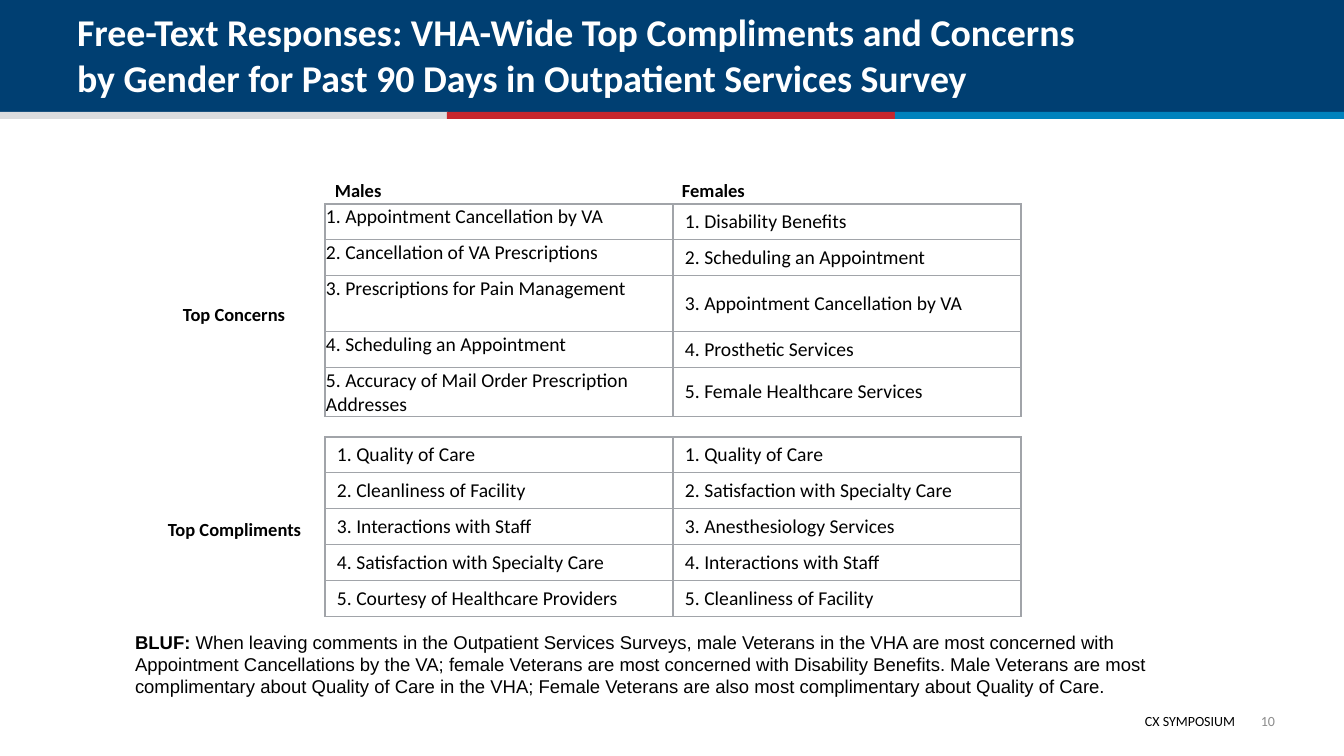
from dataclasses import dataclass

from lxml import etree
from pptx import Presentation
from pptx import util as u
from pptx.dml.color import RGBColor
from pptx.enum import shapes, text
from pptx.oxml.ns import qn

TITLE = ("Free-Text Responses: VHA-Wide Top Compliments and Concerns\v"
         "by Gender for Past 90 Days in Outpatient Services Survey")
CONCERNS = [
    ("Appointment Cancellation by VA", "Disability Benefits"),
    ("Cancellation of VA Prescriptions", "Scheduling an Appointment"),
    ("Prescriptions for Pain Management", "Appointment Cancellation by VA"),
    ("Scheduling an Appointment", "Prosthetic Services"),
    ("Accuracy of Mail Order Prescription Addresses", "Female Healthcare Services"),
]
COMPLIMENTS = [
    ("Quality of Care", "Quality of Care"),
    ("Cleanliness of Facility", "Satisfaction with Specialty Care"),
    ("Interactions with Staff", "Anesthesiology Services"),
    ("Satisfaction with Specialty Care", "Interactions with Staff"),
    ("Courtesy of Healthcare Providers", "Cleanliness of Facility"),
]
LABELS = [
    ("Males", 325, 174, 67),
    ("Females", 672, 174, 84),
    ("Top Concerns", 173, 298, 124),
    ("Top Compliments", 158, 513, 155),
]
BLUF = [
    ("BLUF:", True),
    (" When leaving comments in the Outpatient Services Surveys, male Veterans in the VHA "
     "are most concerned with Appointment Cancellations by the VA; female Veterans are most "
     "concerned with Disability Benefits. Male Veterans are most complimentary about Quality "
     "of Care in the VHA; Female Veterans are also most complimentary about Quality of Care.",
     False),
]


@dataclass(frozen=True)
class Theme:
    navy: str = "003F72"
    stripes: tuple = ("DBDCDE", "C6262D", "0082BD")
    white: str = "FFFFFF"
    ink: str = "000000"
    muted: str = "8C8C8C"
    border: str = "A1A4A9"
    font: str = "Calibri"
    note_font: str = "Arial"
    title: float = 27
    cell: float = 14
    label: float = 13.2
    footer: float = 10


T = Theme()
W, H = 1344, 756
TABLE_X, COL_W, ROW_H = 325, 348, 35
TIGHT, ROOMY = (1, 1, 1, 0), (12, 6, 12, 6)
TOP, MIDDLE, BOTTOM = (text.MSO_ANCHOR.TOP, text.MSO_ANCHOR.MIDDLE,
                       text.MSO_ANCHOR.BOTTOM)


def px(n):
    return u.Emu(round(n * 914400 / 100.8))


def write(tf, content, size=T.label, color=T.ink, font=T.font, bold=False,
          align=text.PP_ALIGN.LEFT, before=0):
    p = tf.paragraphs[0]
    p.alignment = align
    p.space_before = u.Pt(before)
    runs = [(content, bold)] if isinstance(content, str) else content
    for words, strong in runs:
        for i, line in enumerate(words.split("\v")):
            if i:
                p.add_line_break()
            r = p.add_run()
            r.text = line
            r.font.size = u.Pt(size)
            r.font.name = font
            r.font.bold = strong
            r.font.color.rgb = RGBColor.from_string(color)


def set_margins(target, insets):
    (target.margin_left, target.margin_top,
     target.margin_right, target.margin_bottom) = map(px, insets)


def add_bar(s, x, y, w, h, color):
    sp = s.shapes.add_shape(shapes.MSO_SHAPE.RECTANGLE, *map(px, (x, y, w, h)))
    sp.shadow.inherit = False
    sp.fill.solid()
    sp.fill.fore_color.rgb = RGBColor.from_string(color)
    sp.line.fill.background()


def add_text(s, box, content, insets=(10, 5, 10, 5), wrap=True, anchor=TOP, **fmt):
    tf = s.shapes.add_textbox(*map(px, box)).text_frame
    tf.word_wrap = wrap
    tf.vertical_anchor = anchor
    set_margins(tf, insets)
    write(tf, content, **fmt)


def add_borders(cell):
    tc_pr = cell._tc.get_or_add_tcPr()
    for i, side in enumerate(("a:lnL", "a:lnR", "a:lnT", "a:lnB")):
        ln = etree.Element(qn(side), w=str(u.Pt(1)))
        fill = etree.SubElement(ln, qn("a:solidFill"))
        etree.SubElement(fill, qn("a:srgbClr"), val=T.border)
        tc_pr.insert(i, ln)


def add_ranking(s, y, rows, heights, styles):
    box = (TABLE_X, y, 2 * COL_W, sum(heights))
    table = s.shapes.add_table(len(rows), 2, *map(px, box)).table
    table.first_row = table.horz_banding = False
    for column in table.columns:
        column.width = px(COL_W)
    for i, (row, height) in enumerate(zip(rows, heights)):
        table.rows[i].height = px(height)
        for j, (topic, (insets, anchor)) in enumerate(zip(row, styles)):
            cell = table.cell(i, j)
            set_margins(cell, insets)
            cell.vertical_anchor = anchor
            cell.fill.background()
            add_borders(cell)
            write(cell.text_frame, f"{i + 1}. {topic}", size=T.cell)


def main():
    prs = Presentation()
    prs.slide_width, prs.slide_height = px(W), px(H)
    s = prs.slides.add_slide(prs.slide_layouts[5])

    add_bar(s, 0, 0, W, 115, T.navy)
    stripe_w = W // len(T.stripes)
    for i, color in enumerate(T.stripes):
        add_bar(s, i * stripe_w - 1, 112, stripe_w + 1, 7, color)

    title = s.shapes.title
    title.left, title.top, title.width, title.height = map(px, (67, 15, 1210, 90))
    tf = title.text_frame
    tf.auto_size = text.MSO_AUTO_SIZE.NONE
    tf.vertical_anchor = BOTTOM
    write(tf, TITLE, size=T.title, color=T.white, bold=True)
    s.shapes._spTree.append(title._element)

    add_ranking(s, 204, CONCERNS, [ROW_H, ROW_H, 56, ROW_H, 49],
                [(TIGHT, TOP), (ROOMY, MIDDLE)])
    add_ranking(s, 437, COMPLIMENTS, [ROW_H] * len(COMPLIMENTS),
                [(ROOMY, MIDDLE)] * 2)

    for label, x, y, w in LABELS:
        add_text(s, (x, y, w, 32), label, wrap=False, bold=True)
    add_text(s, (134, 630, 1077, 69), BLUF, insets=(1, 1, 0, 0),
             font=T.note_font, before=1)

    right = text.PP_ALIGN.RIGHT
    add_text(s, (555, 708, 690, 27), "CX SYMPOSIUM", size=T.footer, align=right)
    add_text(s, (1239, 701, 36, 40), "10", insets=(0, 0, 0, 0), anchor=MIDDLE,
             size=T.footer, color=T.muted, align=right)

    prs.save("out.pptx")


if __name__ == "__main__":
    main()
